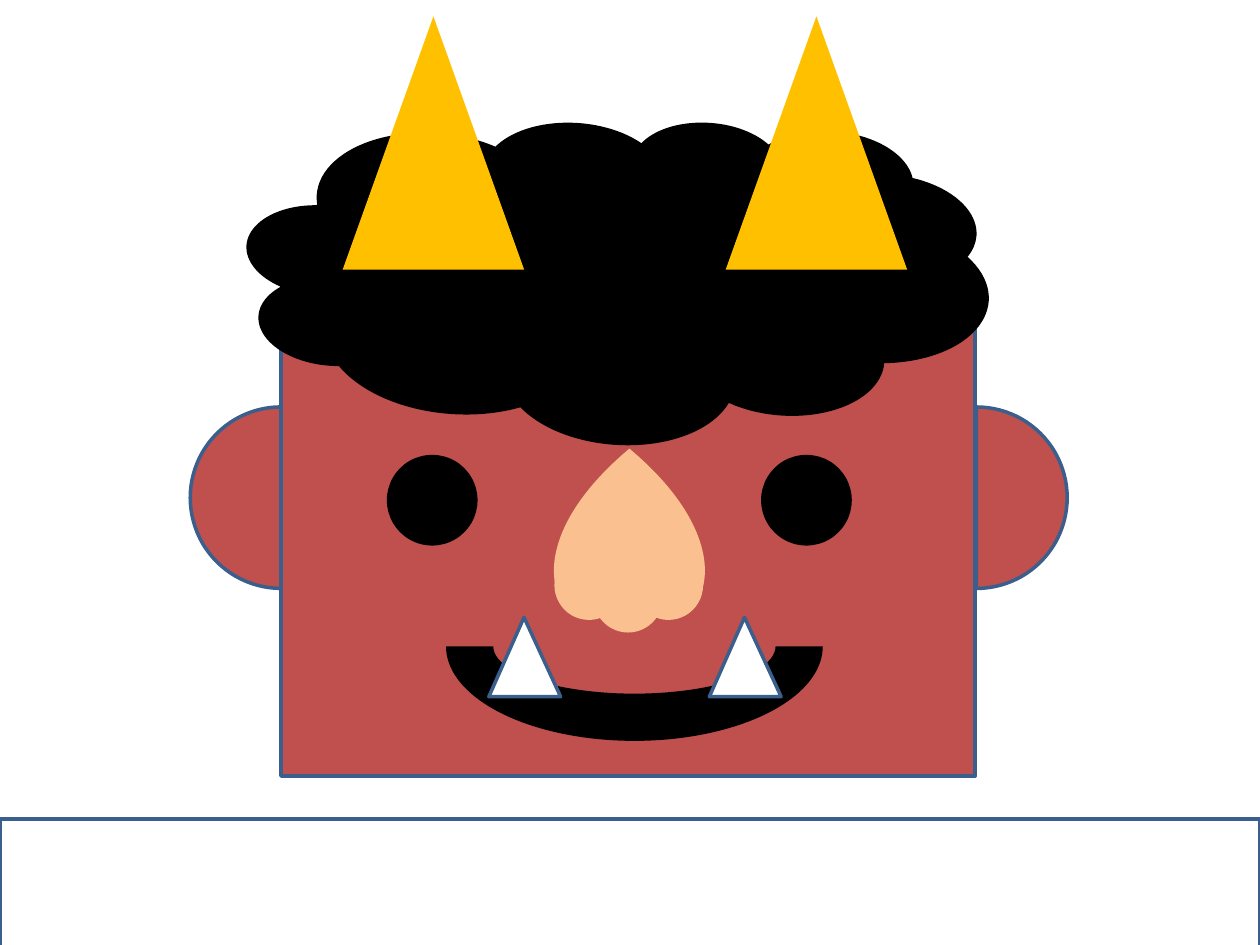
from pptx import Presentation
from pptx.dml.color import RGBColor
from pptx.enum.shapes import MSO_SHAPE as S
from pptx.util import Inches, Pt

RED = RGBColor(0xC0, 0x50, 0x4D)
PEACH = RGBColor(0xFA, 0xC0, 0x90)
BLACK = RGBColor(0, 0, 0)
GOLD = RGBColor(0xFF, 0xC0, 0)
WHITE = RGBColor(0xFF, 0xFF, 0xFF)
OUTLINE = RGBColor(0x3A, 0x5F, 0x8C)

HALF_TURN = 108  # 180 degrees in the units of the pie's adjustments

# preset, (left, top, width, height), fill, then options
HEAD = [
    (S.RECTANGLE, (2.23, 2.46, 5.51, 3.7), RED, dict(outlined=True)),
]
HEAD += [
    (S.PIE, (left, 3.23, 1.44, 1.44), RED,
     dict(outlined=True, rotation=turn, adjust=(0, HALF_TURN)))
    for left, turn in ((7.03, 270), (1.51, 90))
]
NOSE = [(S.HEART, (4.4, 3.56, 1.19, 1.36), PEACH, dict(rotation=180))]
NOSE += [
    (S.OVAL, (left, top, 0.55, 0.55), PEACH, {})
    for left, top in ((4.4, 4.37), (5.03, 4.37), (4.71, 4.47))
]
HAIR = [(S.CLOUD, (1.95, 0.92, 5.9, 2.6), BLACK, dict(rotation=3.9))]
HORNS = [
    (S.ISOSCELES_TRIANGLE, (left, 0.13, 1.44, 2.01), GOLD, {})
    for left in (2.72, 5.76)
]
MOUTH = [(S.BLOCK_ARC, (3.54, 4.38, 2.99, 1.5), BLACK, dict(rotation=180))]
FANGS = [
    (S.ISOSCELES_TRIANGLE, (left, 4.9, 0.57, 0.63), WHITE,
     dict(outlined=True, adjust=(0.49,)))
    for left in (3.88, 5.63)
]
EYES = [(S.OVAL, (left, 3.61, 0.72, 0.72), BLACK, {}) for left in (3.07, 6.04)]
PANEL = [(S.RECTANGLE, (0, 6.5, 10, 1.03), WHITE, dict(outlined=True))]


def draw(shapes, parts):
    for preset, box, fill, options in parts:
        shape = shapes.add_shape(preset, *map(Inches, box))
        shape.shadow.inherit = False
        shape.fill.solid()
        shape.fill.fore_color.rgb = fill
        if options.get("outlined"):
            shape.line.color.rgb = OUTLINE
            shape.line.width = Pt(2)
        else:
            shape.line.fill.background()
        shape.rotation = options.get("rotation", 0)
        for i, value in enumerate(options.get("adjust", ())):
            shape.adjustments[i] = value


def main():
    deck = Presentation()
    deck.slide_width, deck.slide_height = Inches(10), Inches(7.5)
    shapes = deck.slides.add_slide(deck.slide_layouts[6]).shapes
    draw(shapes, HEAD)
    draw(shapes.add_group_shape().shapes, NOSE)
    draw(shapes, HAIR + HORNS + MOUTH + FANGS + EYES + PANEL)
    deck.save("out.pptx")


if __name__ == "__main__":
    main()
